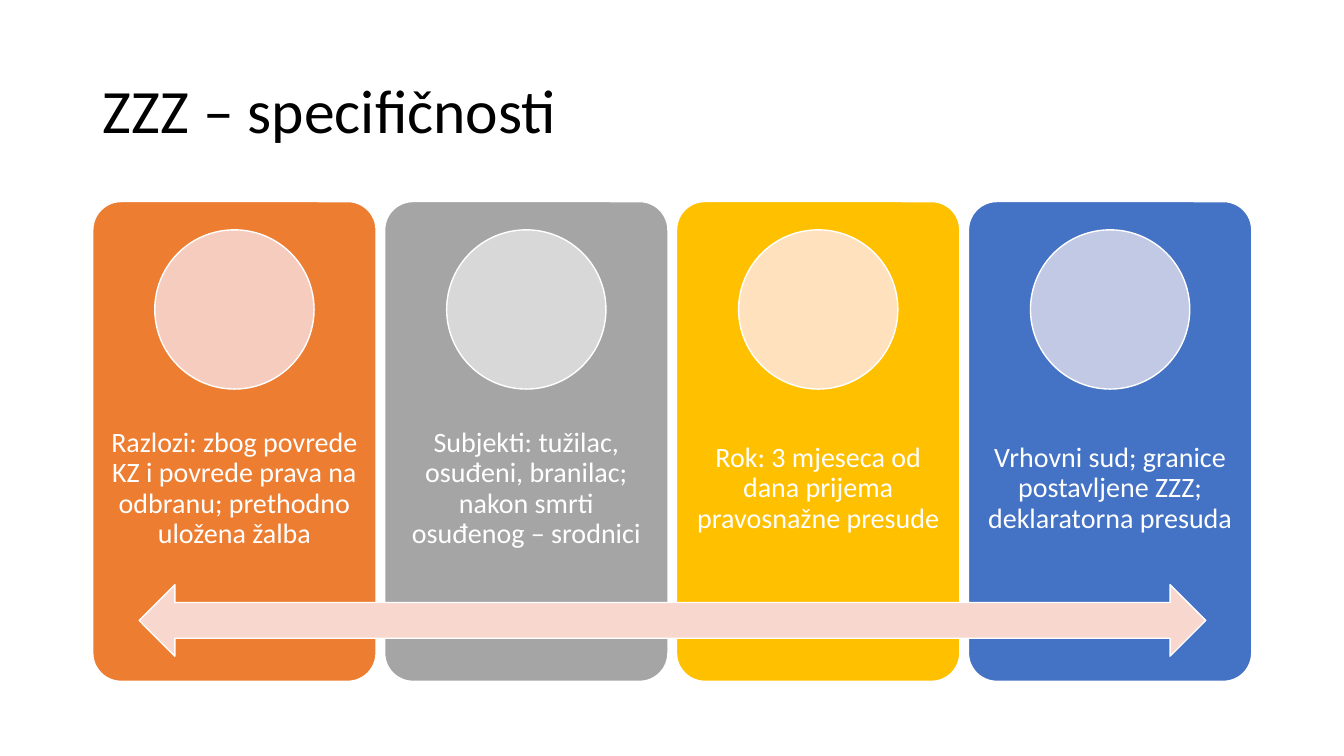
from pptx import Presentation
from pptx.dml.color import RGBColor
from pptx.enum.shapes import MSO_SHAPE
from pptx.enum.text import MSO_ANCHOR, PP_ALIGN
from pptx.util import Inches, Pt

ROUNDED = MSO_SHAPE.ROUNDED_RECTANGLE
ELLIPSE = MSO_SHAPE.OVAL
DOUBLE_ARROW = MSO_SHAPE.LEFT_RIGHT_ARROW
MIDDLE = MSO_ANCHOR.MIDDLE
LEFT = PP_ALIGN.LEFT
CENTER = PP_ALIGN.CENTER

FONT = "Calibri"
BLACK = RGBColor(0x00, 0x00, 0x00)
WHITE = RGBColor(0xFF, 0xFF, 0xFF)
ORANGE = RGBColor(0xED, 0x7D, 0x31)
GRAY = RGBColor(0xA5, 0xA5, 0xA5)
GOLD = RGBColor(0xFF, 0xC0, 0x00)
BLUE = RGBColor(0x44, 0x72, 0xC4)
PALE_ORANGE = RGBColor(0xF6, 0xCC, 0xBE)
PALE_GRAY = RGBColor(0xD8, 0xD8, 0xD8)
PALE_GOLD = RGBColor(0xFF, 0xE2, 0xBD)
PALE_BLUE = RGBColor(0xC1, 0xC9, 0xE4)
ARROW_PINK = RGBColor(0xF8, 0xD7, 0xCE)

CARD_LEFT, CARD_TOP = 0.92, 2
CARD_WIDTH, CARD_HEIGHT = 2.81, 4.76
CARD_PITCH = 2.895
CIRCLE_SIZE = 1.58

CARDS = [
    ("Razlozi: zbog povrede KZ i povrede prava na odbranu; prethodno uložena žalba",
     ORANGE, PALE_ORANGE),
    ("Subjekti: tužilac, osuđeni, branilac; nakon smrti osuđenog – srodnici",
     GRAY, PALE_GRAY),
    ("Rok: 3 mjeseca od dana prijema pravosnažne presude", GOLD, PALE_GOLD),
    ("Vrhovni sud; granice postavljene ZZZ; deklaratorna presuda", BLUE, PALE_BLUE),
]


def write_text(frame, text, size, color, align):
    """Fill a text frame with one formatted paragraph."""
    frame.text = text
    frame.word_wrap = True
    frame.vertical_anchor = MIDDLE
    para = frame.paragraphs[0]
    para.alignment = align
    para.line_spacing = 0.9
    font = para.runs[0].font
    font.name = FONT
    font.size = Pt(size)
    font.color.rgb = color


def add_title(page, text):
    """Place and format the title placeholder."""
    title = page.shapes.title
    title.left, title.top = Inches(0.92), Inches(0.4)
    title.width, title.height = Inches(11.5), Inches(1.45)
    write_text(title.text_frame, text, 44, BLACK, LEFT)


def add_filled_shape(page, kind, left, top, width, height, fill):
    """Draw a flat shape with a thin white outline."""
    shape = page.shapes.add_shape(
        kind, Inches(left), Inches(top), Inches(width), Inches(height))
    shape.shadow.inherit = False
    shape.fill.solid()
    shape.fill.fore_color.rgb = fill
    shape.line.color.rgb = WHITE
    shape.line.width = Pt(1)
    return shape


def add_card(page, left, text, fill, circle_fill):
    """Draw a rounded card with its text and circle."""
    card = add_filled_shape(
        page, ROUNDED, left, CARD_TOP, CARD_WIDTH, CARD_HEIGHT, fill)
    card.adjustments[0] = 0.1
    box = page.shapes.add_textbox(
        Inches(left), Inches(3.9), Inches(CARD_WIDTH), Inches(1.9))
    frame = box.text_frame
    frame.margin_left = frame.margin_right = Inches(0.16)
    frame.margin_top = frame.margin_bottom = Inches(0.16)
    write_text(frame, text, 20, WHITE, CENTER)
    frame.paragraphs[0].space_after = Pt(7)
    circle_left = left + (CARD_WIDTH - CIRCLE_SIZE) / 2
    add_filled_shape(
        page, ELLIPSE, circle_left, 2.28, CIRCLE_SIZE, CIRCLE_SIZE, circle_fill)


def main():
    """Build the slide and save it."""
    deck = Presentation()
    deck.slide_width, deck.slide_height = Inches(13.33), Inches(7.5)
    page = deck.slides.add_slide(deck.slide_layouts.get_by_name("Title Only"))
    add_title(page, "ZZZ – specifičnosti")
    for index, (text, fill, circle_fill) in enumerate(CARDS):
        add_card(page, CARD_LEFT + index * CARD_PITCH, text, fill, circle_fill)
    add_filled_shape(page, DOUBLE_ARROW, 1.38, 5.8, 10.58, 0.71, ARROW_PINK)
    deck.save("out.pptx")


if __name__ == "__main__":
    main()
